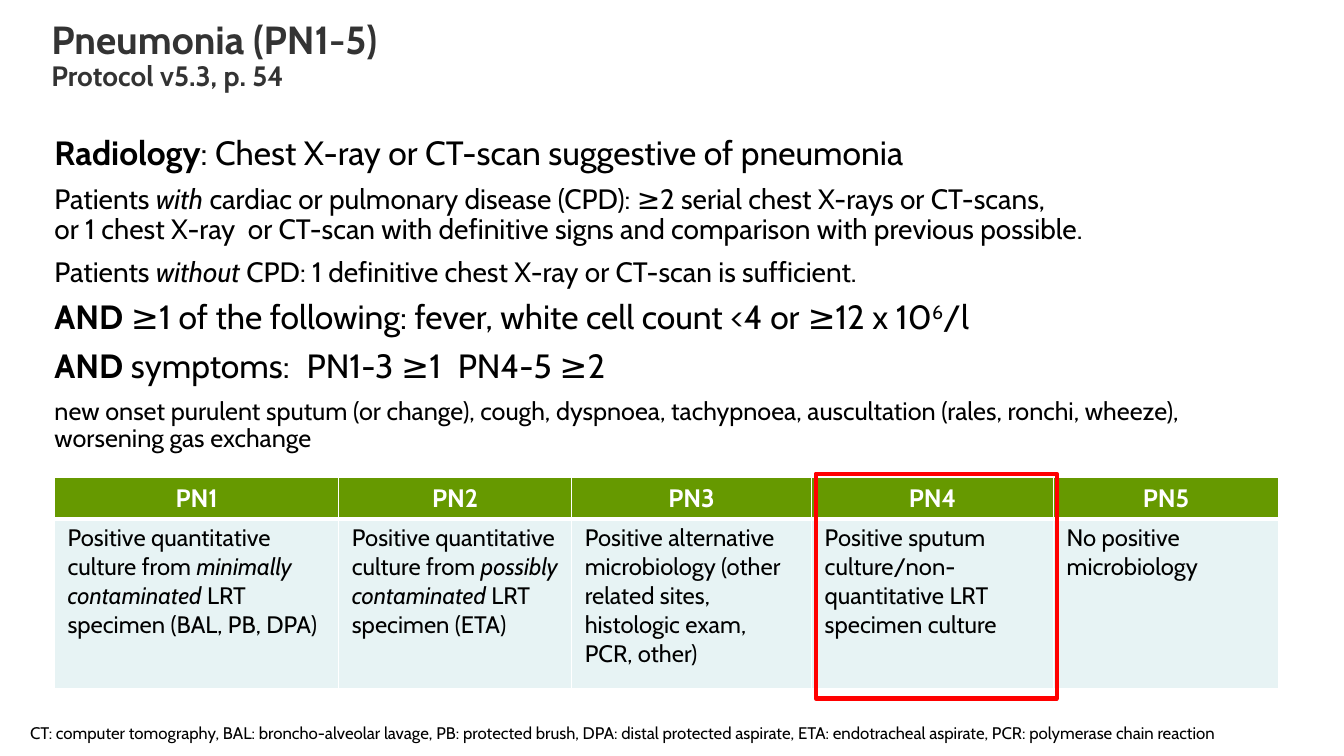
from dataclasses import dataclass

from lxml.etree import SubElement
from pptx import Presentation
from pptx.dml.color import RGBColor
from pptx.enum.text import MSO_ANCHOR as Anchor, MSO_AUTO_SIZE as Fit, PP_ALIGN as Align
from pptx.enum.shapes import MSO_SHAPE as Form
from pptx.oxml.ns import qn
from pptx.util import Inches, Pt

BLACK = RGBColor(0x00, 0x00, 0x00)
WHITE = RGBColor(0xFF, 0xFF, 0xFF)
GREY = RGBColor(0x33, 0x33, 0x33)
GREEN = RGBColor(0x66, 0x99, 0x00)
PALE = RGBColor(0xE7, 0xF3, 0xF4)
RED = RGBColor(0xFF, 0x00, 0x00)
FACE = "Cabin"


@dataclass(frozen=True)
class Span:
    text: str
    bold: bool = False
    tilt: bool = False
    base: int = 0


@dataclass(frozen=True)
class Line:
    size: float
    spans: tuple[Span, ...]
    tabs: tuple[float, ...] = ()


@dataclass(frozen=True)
class Case:
    name: str
    width: float
    spans: tuple[Span, ...]


LINES = (
    Line(24, (Span("Radiology", bold=True),
              Span(": Chest X-ray or CT-scan suggestive of pneumonia"))),
    Line(20, (Span("Patients "), Span("with", tilt=True),
              Span(" cardiac or pulmonary disease (CPD): ≥2 serial chest X-rays or CT-scans, \n"
                   "or 1 chest X-ray  or CT-scan with definitive signs and comparison "
                   "with previous possible."))),
    Line(20, (Span("Patients "), Span("without ", tilt=True),
              Span("CPD: 1 definitive chest X-ray or CT-scan is sufficient."))),
    Line(24, (Span("AND", bold=True),
              Span(" ≥1 of the following: fever, white cell count <4 or ≥12 x 10"),
              Span("6", base=30000), Span("/l"))),
    Line(24, (Span("AND", bold=True), Span(" symptoms:\tPN1-3 ≥1\tPN4-5 ≥2")), (2.63, 4.72)),
    Line(18, (Span("new onset purulent sputum (or change), cough, dyspnoea, tachypnoea, "
                   "auscultation (rales, ronchi, wheeze), worsening gas exchange"),)),
)
CASES = (
    Case("PN1", 2.82, (Span("Positive quantitative culture from "),
                       Span("minimally contaminated ", tilt=True),
                       Span("LRT specimen (BAL, PB, DPA)"))),
    Case("PN2", 2.31, (Span("Positive quantitative culture from "),
                       Span("possibly contaminated ", tilt=True),
                       Span("LRT specimen (ETA)"))),
    Case("PN3", 2.38, (Span("Positive alternative microbiology (other related sites, "
                            "histologic exam, PCR, other)"),)),
    Case("PN4", 2.4, (Span("Positive sputum culture/non-quantitative LRT specimen culture"),)),
    Case("PN5", 2.23, (Span("No positive microbiology"),)),
)
NOTE = ("CT: computer tomography, BAL: broncho-alveolar lavage, PB: protected brush, "
        "DPA: distal protected aspirate, ETA: endotracheal aspirate, "
        "PCR: polymerase chain reaction")


def style(font, size: float, color: RGBColor) -> None:
    font.name, font.size = FACE, Pt(size)
    font.color.rgb = color


def write(para, spans: tuple[Span, ...]) -> None:
    for span in spans:
        for i, part in enumerate(span.text.split("\n")):
            if i:
                para.add_line_break()
            run = para.add_run()
            run.text = part
            run.font.bold, run.font.italic = span.bold, span.tilt
            if span.base:
                run.font._element.set("baseline", str(span.base))


def place(shape, left: float, top: float, width: float, height: float):
    """Move a placeholder, clear its insets and return its text frame."""
    shape.left, shape.top = Inches(left), Inches(top)
    shape.width, shape.height = Inches(width), Inches(height)
    frame = shape.text_frame
    frame.margin_left = frame.margin_right = frame.margin_top = frame.margin_bottom = 0
    frame.vertical_anchor, frame.auto_size, frame.word_wrap = Anchor.TOP, Fit.NONE, True
    return frame


def add_title(shape) -> None:
    para = place(shape, 0.51, 0.2, 11.56, 1.02).paragraphs[0]
    para.alignment, para.line_spacing = Align.LEFT, 0.9
    style(para.font, 28, GREY)
    para.font.bold = True
    para.add_run().text = "Pneumonia (PN1-5)"
    para.add_line_break()
    run = para.add_run()
    run.text = "Protocol v5.3, p. 54"
    run.font.size = Pt(20)


def add_body(shape) -> None:
    frame = place(shape, 0.54, 1.35, 12.14, 1.63)
    for i, line in enumerate(LINES):
        para = frame.add_paragraph() if i else frame.paragraphs[0]
        props = para._p.get_or_add_pPr()
        props.set("marL", "0")
        props.set("indent", "0")
        SubElement(props, qn("a:buNone"))
        if line.tabs:
            stops = SubElement(props, qn("a:tabLst"))
            for pos in line.tabs:
                SubElement(stops, qn("a:tab"), pos=str(Inches(pos)), algn="l")
        para.line_spacing, para.space_after = 0.9, Pt(6)
        para.space_before = Pt(3 if i else 0)
        style(para.font, line.size, BLACK)
        write(para, line.spans)


def paint(cell, fill: RGBColor, top: float, low: float) -> None:
    """Set insets, white borders and fill; top and low are border widths."""
    cell.margin_left = cell.margin_right = Inches(0.13)
    cell.margin_top = cell.margin_bottom = Inches(0.05)
    props = cell._tc.get_or_add_tcPr()
    for side, width in (("L", 1), ("R", 1), ("T", top), ("B", low)):
        edge = SubElement(props, qn(f"a:ln{side}"), w=str(Pt(width)))
        SubElement(SubElement(edge, qn("a:solidFill")), qn("a:srgbClr"), val=str(WHITE))
    cell.fill.solid()
    cell.fill.fore_color.rgb = fill


def add_cases(shapes) -> None:
    table = shapes.add_table(2, len(CASES), Inches(0.54), Inches(4.74),
                             Inches(12.14), Inches(2.09)).table
    table.rows[0].height, table.rows[1].height = Inches(0.4), Inches(1.69)
    for i, case in enumerate(CASES):
        table.columns[i].width = Inches(case.width)
        head, cell = table.cell(0, i), table.cell(1, i)
        paint(head, GREEN, 1, 3)
        paint(cell, PALE, 3, 1)
        para = head.text_frame.paragraphs[0]
        para.alignment = Align.CENTER
        style(para.font, 18, WHITE)
        write(para, (Span(case.name, bold=True),))
        para = cell.text_frame.paragraphs[0]
        style(para.font, 17, BLACK)
        write(para, case.spans)


def add_note(shapes) -> None:
    frame = shapes.add_textbox(Inches(0.2), Inches(7.14), Inches(13.13), Inches(0.28)).text_frame
    frame.word_wrap, frame.auto_size = True, Fit.SHAPE_TO_FIT_TEXT
    para = frame.paragraphs[0]
    para.line_spacing = 0.9
    style(para.font, 12, BLACK)
    para.add_run().text = NOTE


def add_mark(shapes) -> None:
    mark = shapes.add_shape(Form.RECTANGLE, Inches(8.09), Inches(4.7), Inches(2.39), Inches(2.23))
    mark.shadow.inherit = False
    mark.fill.background()
    mark.line.color.rgb, mark.line.width = RED, Pt(3)


def main() -> None:
    deck = Presentation()
    deck.slide_width, deck.slide_height = Inches(13.33), Inches(7.5)
    shapes = deck.slides.add_slide(deck.slide_layouts[1]).shapes
    add_title(shapes.title)
    add_body(shapes.placeholders[1])
    add_cases(shapes)
    add_note(shapes)
    add_mark(shapes)
    deck.save("out.pptx")


if __name__ == "__main__":
    main()
